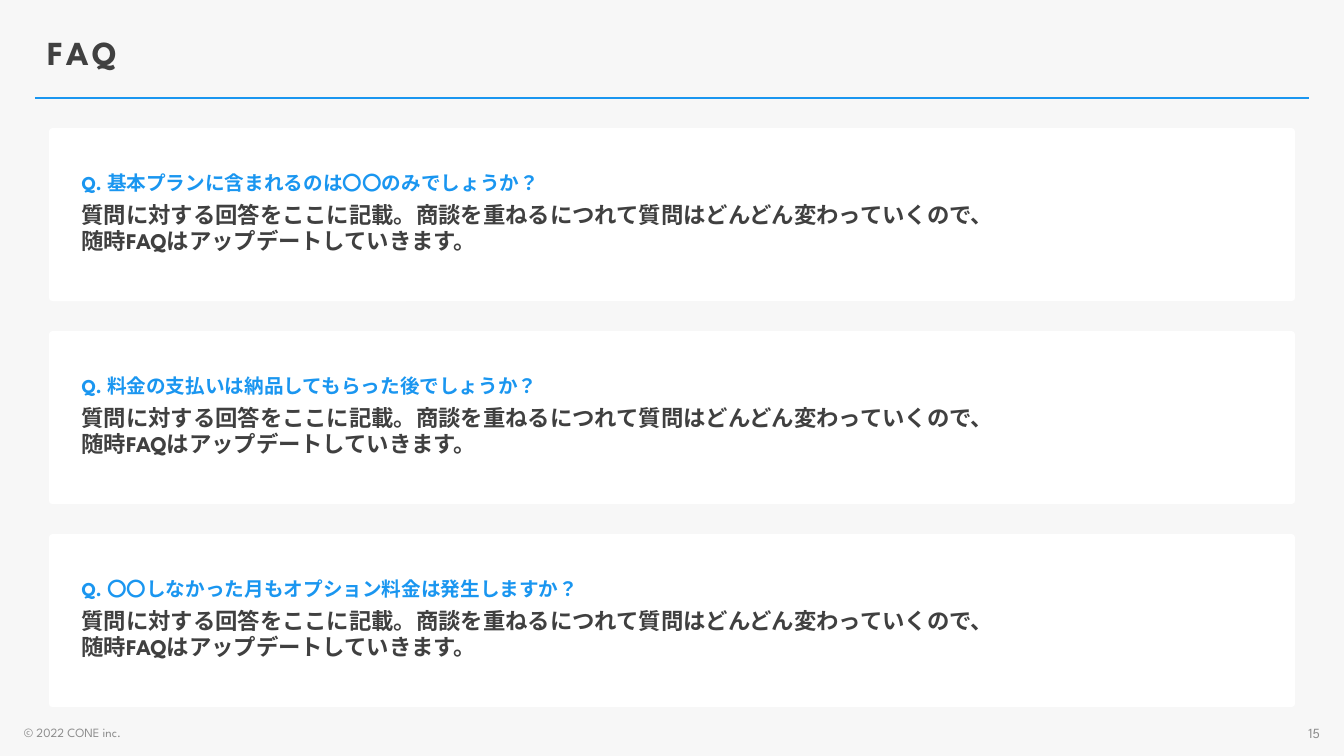
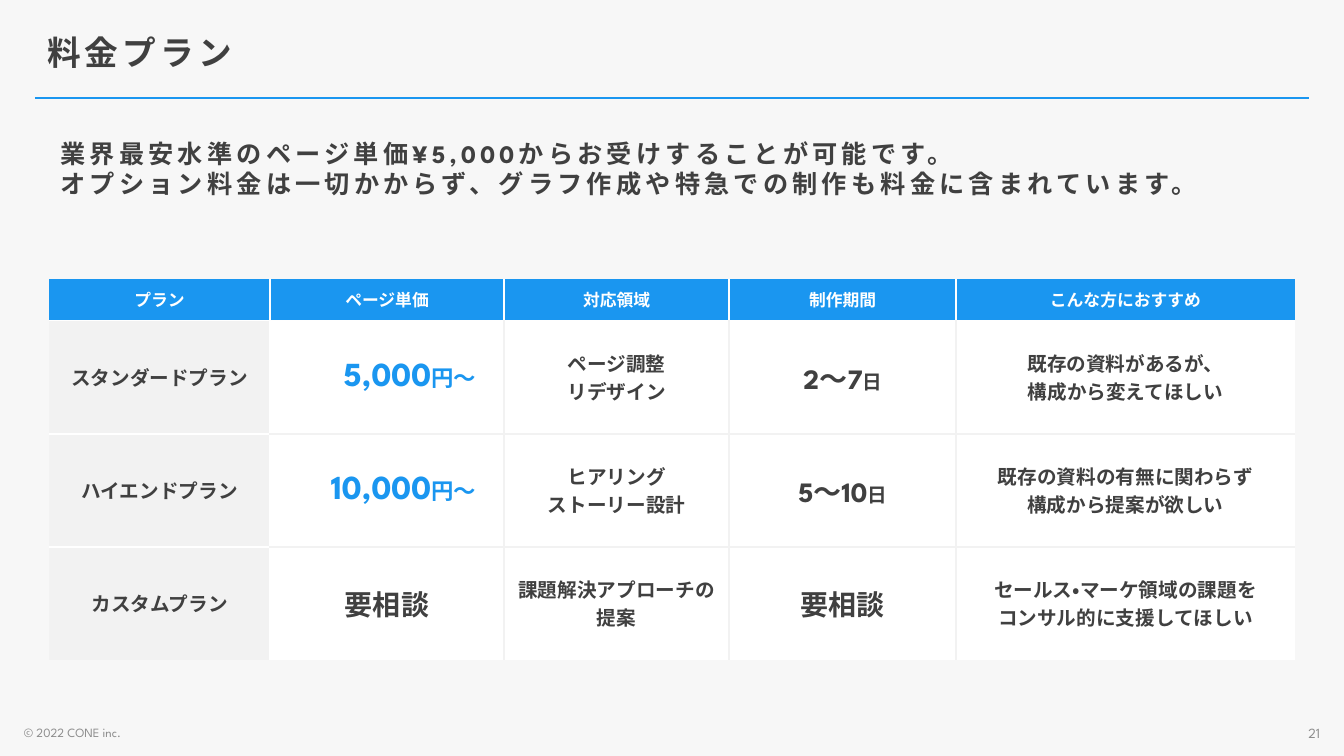
from lxml.etree import SubElement
from pptx import Presentation
from pptx.dml.color import RGBColor
from pptx.enum.lang import MSO_LANGUAGE_ID
from pptx.enum.shapes import MSO_CONNECTOR, MSO_SHAPE
from pptx.enum.text import MSO_ANCHOR, PP_ALIGN
from pptx.oxml.ns import qn
from pptx.util import Pt

FONT = "League Spartan"
BACKGROUND = RGBColor(0xF7, 0xF7, 0xF7)
BLUE = RGBColor(0x1A, 0x96, 0xF0)
DARK = RGBColor(0x40, 0x40, 0x40)
GREY = RGBColor(0x8C, 0x8C, 0x8C)
PALE = RGBColor(0xF2, 0xF2, 0xF2)
WHITE = RGBColor(0xFF, 0xFF, 0xFF)

SLIDE_WIDTH, SLIDE_HEIGHT = 960, 540
CONTENT_LEFT, CONTENT_WIDTH = 35, 890
FOOTER_TOP, FOOTER_WIDTH, FOOTER_HEIGHT, FOOTER_MARGIN = 513.5, 216, 19.5, 10

CARD_TOP, CARD_HEIGHT, CARD_PITCH = 91.5, 123.5, 145
QUESTIONS = [
    "Q. 基本プランに含まれるのは〇〇のみでしょうか？",
    "Q. 料金の支払いは納品してもらった後でしょうか？",
    "Q. 〇〇しなかった月もオプション料金は発生しますか？",
]
ANSWER = [
    "質問に対する回答をここに記載。商談を重ねるにつれて質問はどんどん変わっていくので、",
    "随時FAQはアップデートしていきます。",
]

LEAD = [
    "業界最安水準のページ単価¥5,000からお受けすることが可能です。",
    "オプション料金は一切かからず、グラフ作成や特急での制作も料金に含まれています。",
]
TABLE_TOP, HEADER_HEIGHT, PLAN_HEIGHT = 199, 30, 80.75
COLUMN_WIDTHS = [158, 167, 161, 162, 242]
HEADERS = ["プラン", "ページ単価", "対応領域", "制作期間", "こんな方におすすめ"]
CONSULT = "要相談"
# Plan, price, scope, days, recommended for
PLANS = [
    ("スタンダードプラン", "5,000", ["ページ調整", "リデザイン"], "2〜7",
     ["既存の資料があるが、", "構成から変えてほしい"]),
    ("ハイエンドプラン", "10,000", ["ヒアリング", "ストーリー設計"], "5〜10",
     ["既存の資料の有無に関わらず", "構成から提案が欲しい"]),
    ("カスタムプラン", CONSULT, ["課題解決アプローチの", "提案"], CONSULT,
     ["セールス・マーケ領域の課題を", "コンサル的に支援してほしい"]),
]


def add_run(paragraph, text, size=14, color=DARK, bold=True, tracking=0):
    run = paragraph.add_run()
    run.text = text
    font = run.font
    font.name, font.size, font.bold = FONT, Pt(size), bold
    font.color.rgb = color
    font.language_id = MSO_LANGUAGE_ID.JAPANESE
    if tracking:
        font._element.set("spc", str(tracking * 100))


def add_paragraph(frame, text, align=PP_ALIGN.LEFT, before=0, line_spacing=None, **run_format):
    """Fill the empty first paragraph, or append another one."""
    paragraph = frame.paragraphs[0]
    if paragraph.runs:
        paragraph = frame.add_paragraph()
        paragraph.space_before = Pt(before)
    paragraph.alignment = align
    if line_spacing:
        paragraph.line_spacing = line_spacing
    add_run(paragraph, text, **run_format)
    return paragraph


def add_text_box(slide, lines, left, top, width, height, anchor=MSO_ANCHOR.MIDDLE, **text_format):
    shape = slide.shapes.add_textbox(Pt(left), Pt(top), Pt(width), Pt(height))
    frame = shape.text_frame
    frame.word_wrap = True
    frame.vertical_anchor = anchor
    for line in lines:
        add_paragraph(frame, line, **text_format)
    return frame


def add_base_slide(presentation, title, number):
    """Background, title, rule and footer shared by every slide."""
    slide = presentation.slides.add_slide(presentation.slide_layouts[6])
    slide.background.fill.solid()
    slide.background.fill.fore_color.rgb = BACKGROUND

    rule = slide.shapes.add_connector(MSO_CONNECTOR.STRAIGHT, Pt(25), Pt(70), Pt(935), Pt(70))
    rule.line.color.rgb = BLUE
    rule.line.width = Pt(2)
    SubElement(rule._element.spPr, qn("a:effectLst"))

    frame = add_text_box(slide, [title], 26.5, 15, 901.5, 45.5,
                         size=24, tracking=3, line_spacing=0.9)
    frame.margin_top = Pt(6)

    footer = dict(top=FOOTER_TOP, width=FOOTER_WIDTH, height=FOOTER_HEIGHT,
                  color=GREY, bold=False)
    add_text_box(slide, ["© 2022 CONE inc."], left=FOOTER_MARGIN, size=9, **footer)
    add_text_box(slide, [str(number)], left=SLIDE_WIDTH - FOOTER_MARGIN - FOOTER_WIDTH,
                 size=10, align=PP_ALIGN.RIGHT, **footer)
    return slide


def add_card(slide, question, top):
    shape = slide.shapes.add_shape(MSO_SHAPE.ROUNDED_RECTANGLE, Pt(CONTENT_LEFT), Pt(top),
                                   Pt(CONTENT_WIDTH), Pt(CARD_HEIGHT))
    shape.adjustments[0] = 0.02
    shape.shadow.inherit = False
    shape.fill.solid()
    shape.fill.fore_color.rgb = WHITE
    shape.line.fill.background()
    frame = shape.text_frame
    frame.word_wrap = True
    frame.vertical_anchor = MSO_ANCHOR.MIDDLE
    frame.margin_left = Pt(22.5)
    add_paragraph(frame, question, color=BLUE, line_spacing=0.8)
    for line, before in zip(ANSWER, (9, 3)):
        add_paragraph(frame, line, size=16, before=before, line_spacing=0.8)


def set_border(cell, side, color):
    line = SubElement(cell._tc.get_or_add_tcPr(), qn(f"a:ln{side}"), w=str(Pt(1.5)))
    if color is None:
        SubElement(line, qn("a:noFill"))
    else:
        fill = SubElement(line, qn("a:solidFill"))
        SubElement(fill, qn("a:srgbClr"), val=str(color))


def style_cell(cell, row, column):
    """Borders are white beside the header and plan names, pale inside, none outside."""
    last_row, last_column = len(PLANS), len(HEADERS) - 1
    set_border(cell, "L", None if column == 0 else WHITE if row == 0 or column == 1 else PALE)
    set_border(cell, "R", None if column == last_column
               else WHITE if row == 0 or column == 0 else PALE)
    set_border(cell, "T", None if row == 0 else WHITE if row == 1 or column == 0 else PALE)
    set_border(cell, "B", None if row == last_row
               else WHITE if row == 0 or column == 0 else PALE)
    cell.fill.solid()
    cell.fill.fore_color.rgb = BLUE if row == 0 else PALE if column == 0 else WHITE
    cell.vertical_anchor = MSO_ANCHOR.MIDDLE


def fill_cell(cell, lines, unit=None, unit_size=14, align=PP_ALIGN.CENTER, **run_format):
    for line in lines:
        paragraph = add_paragraph(cell.text_frame, line, align=align, **run_format)
    if unit:
        add_run(paragraph, unit, **{**run_format, "size": unit_size})


def add_plan_table(slide):
    row_heights = [HEADER_HEIGHT] + [PLAN_HEIGHT] * len(PLANS)
    table = slide.shapes.add_table(len(row_heights), len(HEADERS), Pt(CONTENT_LEFT), Pt(TABLE_TOP),
                                   Pt(CONTENT_WIDTH), Pt(sum(row_heights))).table
    table.first_row = table.horz_banding = False
    for column, width in zip(table.columns, COLUMN_WIDTHS):
        column.width = Pt(width)
    for row_index, height in enumerate(row_heights):
        table.rows[row_index].height = Pt(height)
        for column_index in range(len(HEADERS)):
            style_cell(table.cell(row_index, column_index), row_index, column_index)

    for column_index, header in enumerate(HEADERS):
        fill_cell(table.cell(0, column_index), [header], size=12, color=WHITE)
    for row_index, (plan, price, scope, days, audience) in enumerate(PLANS, start=1):
        cells = [table.cell(row_index, index) for index in range(len(HEADERS))]
        fill_cell(cells[0], [plan])
        fill_cell(cells[2], scope)
        fill_cell(cells[4], audience)
        if price == CONSULT:
            fill_cell(cells[1], [price], size=20)
            fill_cell(cells[3], [days], size=20)
        else:
            cells[1].margin_right = Pt(20)
            fill_cell(cells[1], [price], unit="円〜", unit_size=16,
                      align=PP_ALIGN.RIGHT, size=24, color=BLUE)
            fill_cell(cells[3], [days], unit="日", size=20)


def main():
    presentation = Presentation()
    presentation.slide_width, presentation.slide_height = Pt(SLIDE_WIDTH), Pt(SLIDE_HEIGHT)

    # Questions and answers
    slide = add_base_slide(presentation, "FAQ", 15)
    for index, question in enumerate(QUESTIONS):
        add_card(slide, question, CARD_TOP + index * CARD_PITCH)

    # Price plans
    slide = add_base_slide(presentation, "料金プラン", 21)
    add_text_box(slide, LEAD, 36, 101, 888, 56, anchor=MSO_ANCHOR.TOP,
                 size=18, tracking=3, before=6, line_spacing=0.72)
    add_plan_table(slide)

    presentation.save("out.pptx")


if __name__ == "__main__":
    main()
